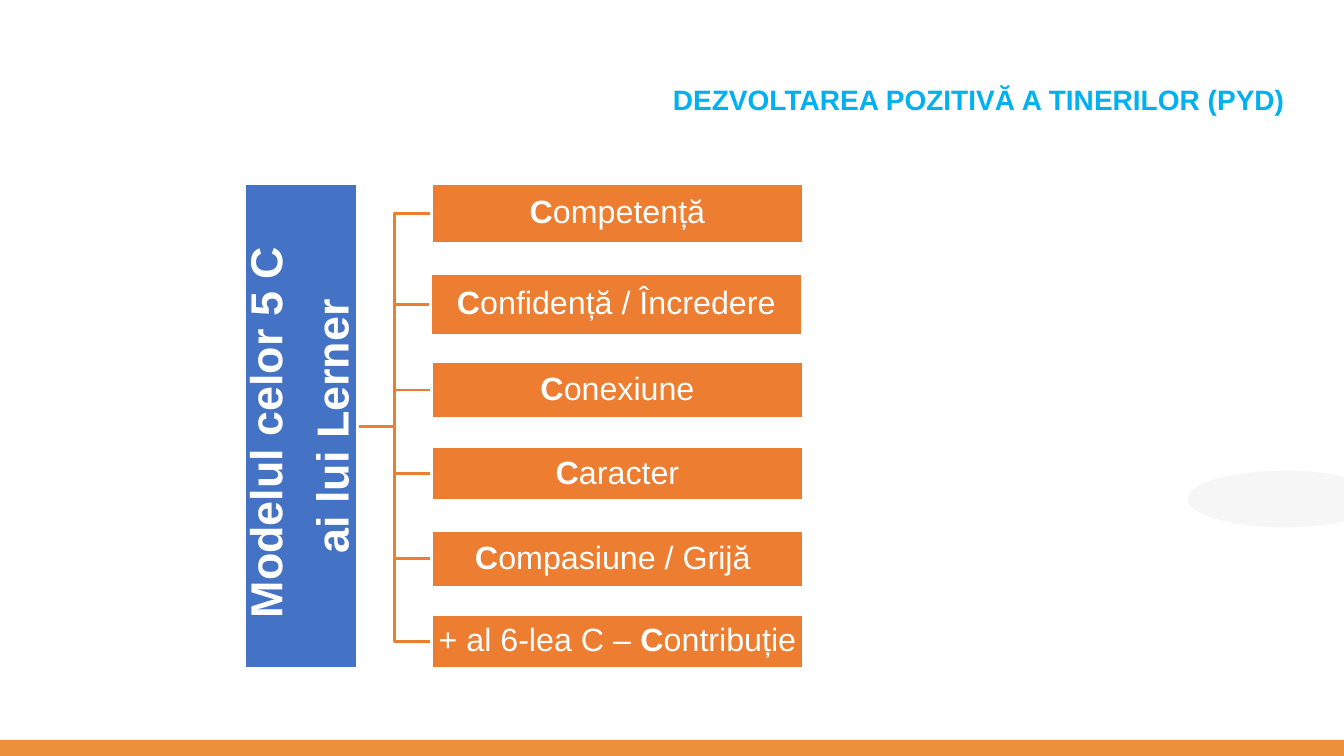
from lxml import etree
from pptx import Presentation
from pptx.dml.color import RGBColor
from pptx.enum import shapes, text
from pptx.oxml import ns
from pptx.util import Inches, Pt

WHITE, ORANGE, BLUE, CYAN = "FFFFFF", "ED7D31", "4472C4", "00B0F0"
TRUNK_START, TRUNK_X, TRUNK_Y = 3.55, 3.91, 4.23
BOX_WIDTH = 3.69
BOXES = [
    (4.28, 1.82, 0.59, [("C", True), ("ompetență", False)]),
    (4.27, 2.71, 0.62, [("C", True), ("onfidență / Încredere", False)]),
    (4.28, 3.59, 0.56, [("C", True), ("onexiune", False)]),
    (4.28, 4.43, 0.54, [("C", True), ("aracter", False)]),
    (4.28, 5.26, 0.57, [("C", True), ("ompasiune / Grijă ", False)]),
    (4.28, 6.10, 0.53, [("+ al 6-lea C – ", False), ("C", True), ("ontribuție", False)]),
]


def color(value):
    return RGBColor.from_string(value)


def add_filled(slide, kind, bounds, fill, outline=None):
    shape = slide.shapes.add_shape(kind, *map(Inches, bounds))
    shape.shadow.inherit = False
    shape.fill.solid()
    shape.fill.fore_color.rgb = color(fill)
    if outline:
        shape.line.color.rgb = color(outline)
        shape.line.width = Pt(2)
    else:
        shape.line.fill.background()
    return shape


def set_frame(shape, anchor, horizontal, vertical):
    frame = shape.text_frame
    frame.word_wrap = True
    frame.auto_size = text.MSO_AUTO_SIZE.NONE
    frame.vertical_anchor = anchor
    frame.margin_left = frame.margin_right = Inches(horizontal)
    frame.margin_top = frame.margin_bottom = Inches(vertical)
    return frame


def write_paragraph(paragraph, runs, size, font_color, alignment):
    paragraph.alignment = alignment
    paragraph.line_spacing = 0.9
    paragraph.space_before = Pt(0)
    for content, bold in runs:
        run = paragraph.add_run()
        run.text = content
        run.font.name = "Arial"
        run.font.size = Pt(size)
        run.font.bold = bold
        run.font.color.rgb = color(font_color)


def add_label(slide, bounds, fill, lines, size, rotation=0):
    shape = add_filled(slide, shapes.MSO_SHAPE.RECTANGLE, bounds, fill, WHITE)
    shape.rotation = rotation
    frame = set_frame(shape, text.MSO_ANCHOR.MIDDLE, 0.02, 0.02)
    for index, runs in enumerate(lines):
        paragraph = frame.add_paragraph() if index else frame.paragraphs[0]
        write_paragraph(paragraph, runs, size, WHITE, text.PP_ALIGN.CENTER)
        paragraph.space_after = Pt(size * 0.4)


def add_branch(slide, end_x, end_y):
    builder = slide.shapes.build_freeform(Inches(TRUNK_START), Inches(TRUNK_Y))
    corners = [(TRUNK_X, TRUNK_Y), (TRUNK_X, end_y), (end_x, end_y)]
    builder.add_line_segments([(Inches(x), Inches(y)) for x, y in corners], close=False)
    branch = builder.convert_to_shape()
    branch.shadow.inherit = False
    branch.fill.background()
    branch.line.color.rgb = color(ORANGE)
    branch.line.width = Pt(2)


def add_title(slide, content):
    title = slide.shapes.title
    title.left, title.top, title.width, title.height = map(Inches, (3.34, 0.81, 9.5, 0.92))
    frame = set_frame(title, text.MSO_ANCHOR.TOP, 0.1, 0.05)
    write_paragraph(frame.paragraphs[0], [(content, True)], 20, CYAN, text.PP_ALIGN.RIGHT)


def add_decoration(slide):
    ellipse = add_filled(slide, shapes.MSO_SHAPE.OVAL, (11.78, 4.67, 1.92, 0.56), "F5F5F5")
    fill_color = ellipse.fill._xPr.find(".//" + ns.qn("a:srgbClr"))
    etree.SubElement(fill_color, ns.qn("a:alpha")).set("val", "89000")
    add_filled(slide, shapes.MSO_SHAPE.RECTANGLE, (0, 7.34, 13.33, 0.16), "EA9139")


def main():
    presentation = Presentation()
    presentation.slide_width = Inches(13.33)
    presentation.slide_height = Inches(7.5)
    slide = presentation.slides.add_slide(presentation.slide_layouts[5])
    add_title(slide, "DEZVOLTAREA POZITIVĂ A TINERILOR (PYD)")
    add_decoration(slide)
    for left, top, height, _ in reversed(BOXES):
        add_branch(slide, left, top + height / 2)
    root_lines = [[("Modelul celor 5 C ", True)], [("ai lui Lerner", True)]]
    add_label(slide, (0.58, 3.67, 4.81, 1.12), BLUE, root_lines, 32, 270)
    for left, top, height, runs in BOXES:
        add_label(slide, (left, top, BOX_WIDTH, height), ORANGE, [runs], 23)
    presentation.save("out.pptx")


if __name__ == "__main__":
    main()
